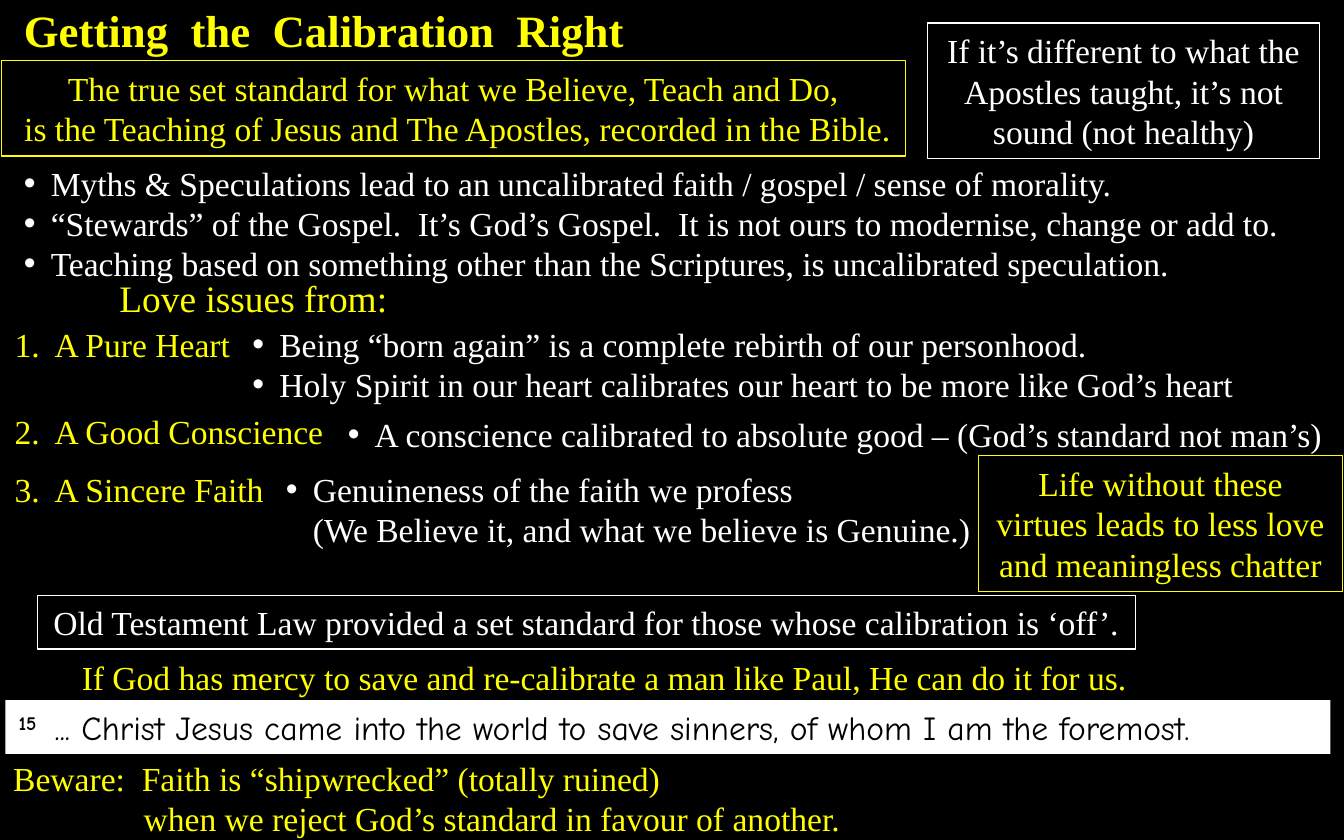
import pptx
import pptx.util
import pptx.dml.color
import pptx.enum.shapes
import pptx.enum.text
import pptx.oxml.ns
import lxml.etree

Inches = pptx.util.Inches
Pt = pptx.util.Pt
RGBColor = pptx.dml.color.RGBColor
ALIGN = pptx.enum.text.PP_ALIGN

BLACK = RGBColor(0, 0, 0)
WHITE = RGBColor(255, 255, 255)
YELLOW = RGBColor(255, 255, 0)
SERIF = "Times New Roman"
HAND = "Comic Neue"
LABEL_INDENT = 0.35
BULLET_INDENT = 0.2


def add_run(paragraph, text, color, size=18, font=SERIF, bold=False):
    run = paragraph.add_run()
    run.text = text
    run.font.name = font
    run.font.size = Pt(size)
    run.font.bold = bold
    run.font.color.rgb = color
    return run


def add_lines(paragraph, lines, color, size=18, bold=False):
    for index, line in enumerate(lines):
        if index:
            paragraph.add_line_break()
        add_run(paragraph, line, color, size, bold=bold)


def set_hanging_indent(paragraph, indent):
    properties = paragraph._p.get_or_add_pPr()
    properties.set("marL", str(Inches(indent)))
    properties.set("indent", str(-Inches(indent)))


def set_bullet(paragraph):
    properties = paragraph._p.get_or_add_pPr()
    for tag, name, value in (("a:buFont", "typeface", "Arial"), ("a:buChar", "char", "•")):
        element = lxml.etree.SubElement(properties, pptx.oxml.ns.qn(tag))
        element.set(name, value)


def add_text_box(slide, left, top, width, height):
    box = slide.shapes.add_textbox(Inches(left), Inches(top), Inches(width), Inches(height))
    box.text_frame.word_wrap = True
    return box.text_frame


def add_label(slide, bounds, lines, size=18, bold=False, indent=LABEL_INDENT):
    paragraph = add_text_box(slide, *bounds).paragraphs[0]
    set_hanging_indent(paragraph, indent)
    add_lines(paragraph, lines, YELLOW, size, bold)


def add_bullets(slide, bounds, items):
    frame = add_text_box(slide, *bounds)
    for index, lines in enumerate(items):
        paragraph = frame.add_paragraph() if index else frame.paragraphs[0]
        set_hanging_indent(paragraph, BULLET_INDENT)
        set_bullet(paragraph)
        add_lines(paragraph, lines, WHITE)


def add_rectangle(slide, left, top, width, height):
    shape = slide.shapes.add_shape(
        pptx.enum.shapes.MSO_SHAPE.RECTANGLE,
        Inches(left), Inches(top), Inches(width), Inches(height))
    shape.shadow.inherit = False
    shape.text_frame.word_wrap = True
    return shape


def add_framed_text(slide, bounds, lines, color):
    shape = add_rectangle(slide, *bounds)
    shape.fill.background()
    shape.line.color.rgb = color
    shape.line.width = Pt(0.75)
    paragraph = shape.text_frame.paragraphs[0]
    paragraph.alignment = ALIGN.CENTER
    add_lines(paragraph, lines, color)


def add_verse(slide, bounds, number, text):
    shape = add_rectangle(slide, *bounds)
    shape.fill.solid()
    shape.fill.fore_color.rgb = WHITE
    shape.line.fill.background()
    paragraph = shape.text_frame.paragraphs[0]
    paragraph.alignment = ALIGN.LEFT
    number_run = add_run(paragraph, number, BLACK, font=HAND, bold=True)
    number_run._r.get_or_add_rPr().set("baseline", "30000")
    add_run(paragraph, text, BLACK, font=HAND)


def main():
    presentation = pptx.Presentation()
    presentation.slide_width = Inches(10)
    presentation.slide_height = Inches(6.25)
    slide = presentation.slides.add_slide(presentation.slide_layouts[6])
    slide.background.fill.solid()
    slide.background.fill.fore_color.rgb = BLACK

    add_label(slide, (0.08, -0.03, 4.8, 0.5), ["Getting  the  Calibration  Right"], 24, True)
    add_framed_text(slide, (0.01, 0.45, 6.73, 0.71), [
        "The true set standard for what we Believe, Teach and Do,",
        " is the Teaching of Jesus and The Apostles, recorded in the Bible."], YELLOW)
    add_framed_text(slide, (6.9, 0.17, 2.92, 1.01), [
        "If it’s different to what the Apostles taught, it’s not sound (not healthy)"], WHITE)
    add_bullets(slide, (0.08, 1.16, 10, 1.01), [
        ["Myths & Speculations lead to an uncalibrated faith / gospel / sense of morality."],
        ["“Stewards” of the Gospel.  It’s God’s Gospel.  "
         "It is not ours to modernise, change or add to."],
        ["Teaching based on something other than the Scriptures, is uncalibrated speculation."]])

    add_label(slide, (0.79, 2, 2.49, 0.44), ["Love issues from:"], 20)
    for top, width, virtue in (
            (2.36, 2.08, "1.  A Pure Heart"),
            (3.01, 2.59, "2.  A Good Conscience"),
            (3.44, 2.08, "3.  A Sincere Faith")):
        add_label(slide, (0.01, top, width, 0.4), [virtue])
    add_bullets(slide, (1.78, 2.36, 7.63, 0.71), [
        ["Being “born again” is a complete rebirth of our personhood."],
        ["Holy Spirit in our heart calibrates our heart to be more like God’s heart"]])
    add_bullets(slide, (2.49, 3.03, 7.47, 0.4), [
        ["A conscience calibrated to absolute good – (God’s standard not man’s)"]])
    add_bullets(slide, (2.03, 3.44, 7.47, 0.71), [
        ["Genuineness of the faith we profess ",
         "(We Believe it, and what we believe is Genuine.)"]])
    add_framed_text(slide, (7.28, 3.39, 2.71, 1.01), [
        "Life without these virtues leads to less love and meaningless chatter"], YELLOW)

    add_verse(slide, (0.04, 5.21, 9.86, 0.4), "15\u00a0",
              " ... Christ Jesus came into the world to save sinners, of whom I am the foremost.")
    add_framed_text(slide, (0.28, 4.43, 8.17, 0.4), [
        "Old Testament Law provided a set standard for those whose calibration is ‘off’."], WHITE)
    add_label(slide, (0.51, 4.84, 9.98, 0.4), [
        "If God has mercy to save and re-calibrate a man like Paul, He can do it for us."])
    add_label(slide, (0, 5.59, 9.98, 0.71), [
        "Beware:  Faith is “shipwrecked” (totally ruined) ",
        "when we reject God’s standard in favour of another."], indent=0.97)

    presentation.save("out.pptx")


if __name__ == "__main__":
    main()
